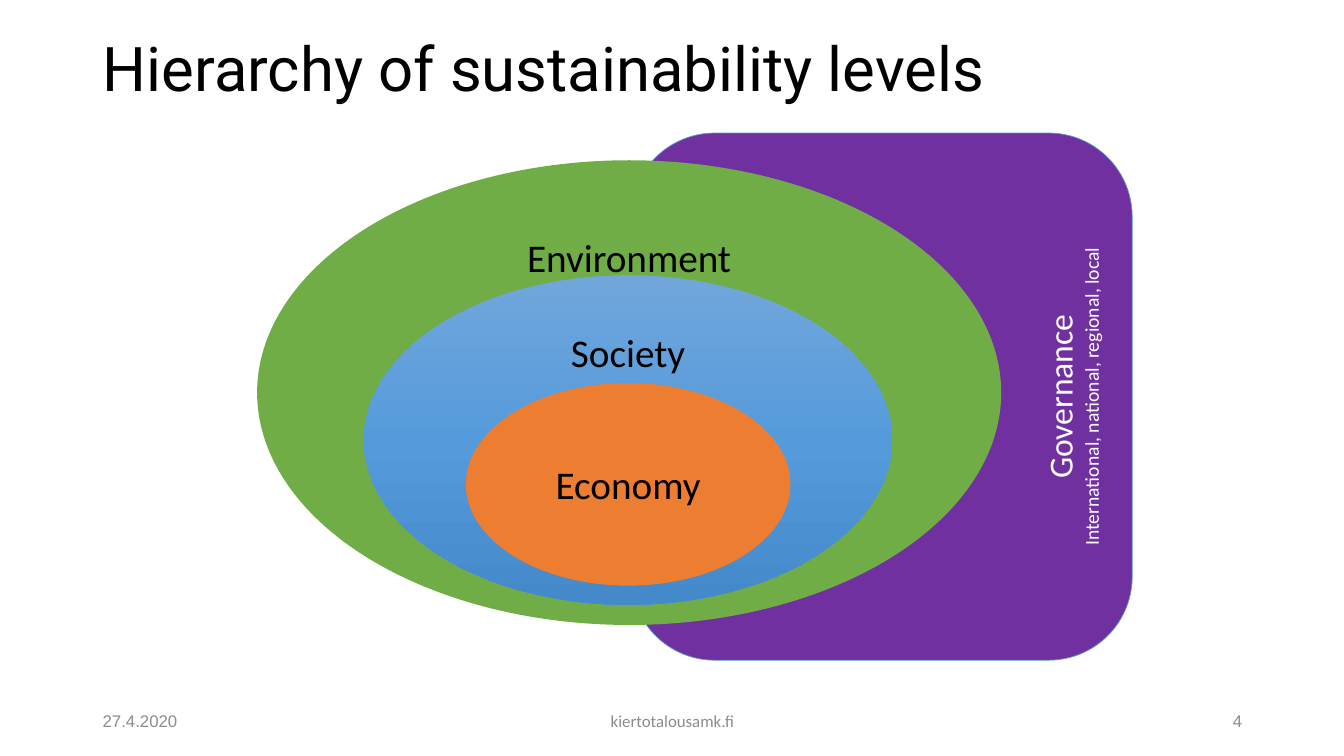
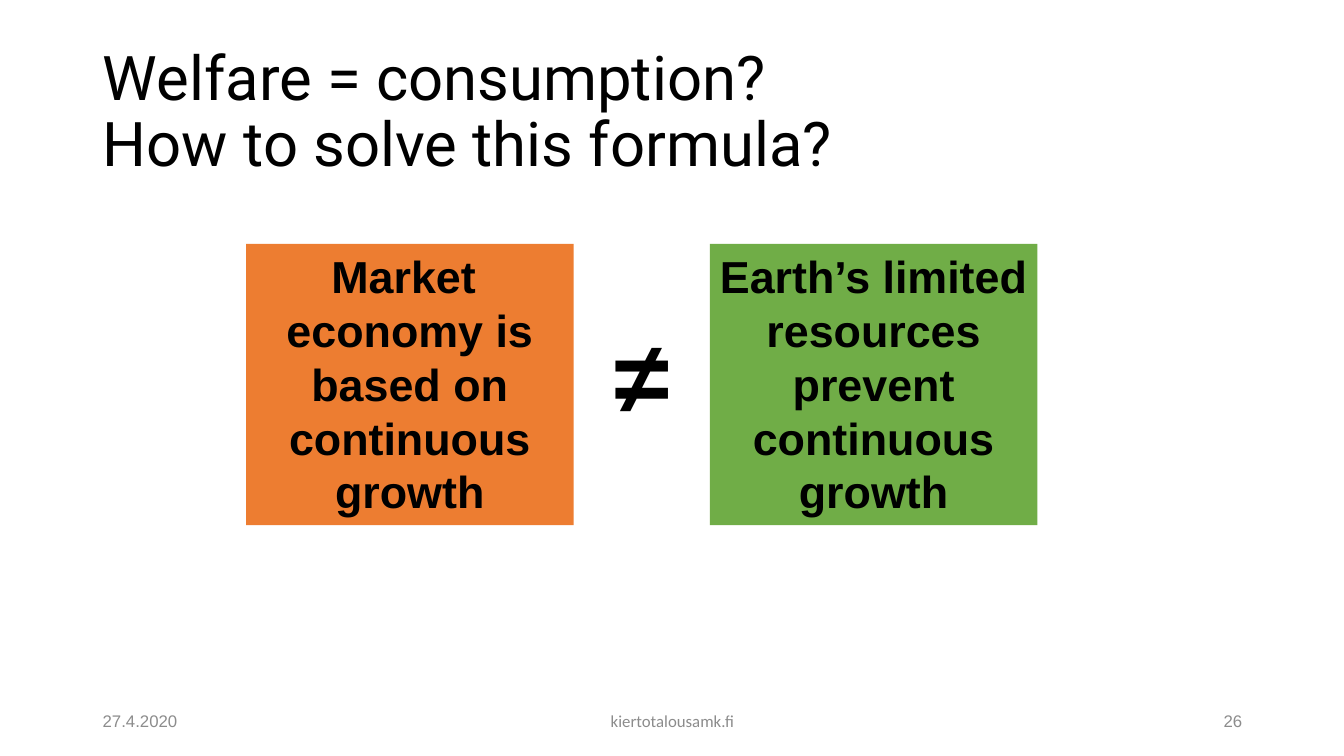
import copy
from dataclasses import dataclass
from typing import Optional

import pptx
import pptx.dml.color
import pptx.enum.shapes
import pptx.enum.text
import pptx.util

Inches = pptx.util.Inches
SHAPE = pptx.enum.shapes.MSO_SHAPE
ALIGN = pptx.enum.text.PP_ALIGN
ANCHOR = pptx.enum.text.MSO_ANCHOR

COLOURS = {
    "text": "000000",
    "light": "FFFFFF",
    "footer": "8C8C8C",
    "governance": "7030A0",
    "outline": "5B9BD5",
    "green": "70AD47",
    "orange": "ED7D31",
}
SOCIETY_GRADIENT = ((0, "71A6DB"), (0.5, "559BDB"), (1, "448ACA"))
MARGIN, CONTENT_WIDTH = 0.92, 11.5


@dataclass(frozen=True)
class Box:
    left: float
    top: float
    width: float
    height: float

    def lengths(self) -> tuple:
        return tuple(Inches(v) for v in (self.left, self.top, self.width, self.height))


@dataclass(frozen=True)
class Level:
    label: str
    box: Box
    colour: Optional[str]  # None means the society gradient
    anchor: ANCHOR = ANCHOR.TOP


@dataclass(frozen=True)
class FooterPart:
    left: float
    width: float
    align: ALIGN
    font: str


# Concentric levels, from the outermost to the innermost
LEVELS = (
    Level("Environment", Box(2.55, 1.59, 7.38, 4.61), "green"),
    Level("Society", Box(3.61, 2.73, 5.24, 3.27), None),
    Level("Economy", Box(4.62, 3.8, 3.22, 2.01), "orange", ANCHOR.MIDDLE),
)
# Date, site and slide number
FOOTER_PARTS = (
    FooterPart(MARGIN, 3, ALIGN.LEFT, "Arial"),
    FooterPart(4.42, 4.5, ALIGN.CENTER, "Calibri"),
    FooterPart(MARGIN + CONTENT_WIDTH - 3, 3, ALIGN.RIGHT, "Arial"),
)


def rgb(value: str) -> pptx.dml.color.RGBColor:
    return pptx.dml.color.RGBColor.from_string(value)


def write(shape, *texts: str, sizes: tuple, font: str = "Calibri", colour: str = "text",
          bold: bool = False, align: ALIGN = ALIGN.CENTER, anchor: ANCHOR = ANCHOR.TOP,
          spacing: Optional[float] = None) -> None:
    """Fill a shape with one paragraph per text, each in its own size."""
    frame = shape.text_frame
    frame.word_wrap = True
    frame.auto_size = pptx.enum.text.MSO_AUTO_SIZE.NONE
    frame.vertical_anchor = anchor
    for index, (text, size) in enumerate(zip(texts, sizes)):
        paragraph = frame.add_paragraph() if index else frame.paragraphs[0]
        paragraph.text = text
        paragraph.alignment = align
        if spacing:
            paragraph.line_spacing = spacing
        for run in paragraph.runs:
            run.font.name = font
            run.font.size = pptx.util.Pt(size)
            run.font.bold = bold
            run.font.color.rgb = rgb(COLOURS[colour])


def add_filled(slide, preset: SHAPE, box: Box, colour: Optional[str]):
    shape = slide.shapes.add_shape(preset, *box.lengths())
    shape.shadow.inherit = False
    shape.line.fill.background()
    if colour:
        shape.fill.solid()
        shape.fill.fore_color.rgb = rgb(COLOURS[colour])
    else:
        fill_gradient(shape)
    return shape


def fill_gradient(shape) -> None:
    shape.fill.gradient()
    shape.fill.gradient_angle = 270
    stop_list = shape._element.xpath(".//a:gsLst")[0]
    stop_list.append(copy.deepcopy(stop_list[-1]))  # third stop
    for stop, (position, colour) in zip(shape.fill.gradient_stops, SOCIETY_GRADIENT):
        stop.position = position
        stop.color.rgb = rgb(colour)


def add_slide(deck, title: str, top: float, height: float, number: int):
    """Title-only slide with the shared title style and footer."""
    slide = deck.slides.add_slide(deck.slide_layouts[5])
    heading = slide.shapes.title
    heading.left, heading.top, heading.width, heading.height = Box(
        MARGIN, top, CONTENT_WIDTH, height).lengths()
    write(heading, title, sizes=(44,), font="Roboto", align=ALIGN.LEFT,
          anchor=ANCHOR.MIDDLE, spacing=0.9)
    for part, text in zip(FOOTER_PARTS, ("27.4.2020", "kiertotalousamk.fi", str(number))):
        box = slide.shapes.add_textbox(*Box(part.left, 6.95, part.width, 0.4).lengths())
        write(box, text, sizes=(12,), font=part.font, colour="footer",
              align=part.align, anchor=ANCHOR.MIDDLE)
    return slide


def build_hierarchy(deck) -> None:
    slide = add_slide(deck, "Hierarchy of sustainability levels", 0.21, 1, 4)

    # Governance stands behind all levels, its text turned upwards
    governance = add_filled(slide, SHAPE.ROUNDED_RECTANGLE,
                            Box(6.26, 1.32, 4.97, 5.23), "governance")
    governance.line.color.rgb = rgb(COLOURS["outline"])
    governance.line.width = pptx.util.Pt(0.5)
    write(governance, "Governance", "International, national, regional, local",
          sizes=(24, 14), colour="light", anchor=ANCHOR.BOTTOM)
    governance.text_frame._txBody.bodyPr.set("vert", "vert270")

    for level in LEVELS:
        ellipse = add_filled(slide, SHAPE.OVAL, level.box, level.colour)
        write(ellipse, level.label, sizes=(28,), anchor=level.anchor)


def build_formula(deck) -> None:
    slide = add_slide(deck, "Welfare = consumption?\nHow to solve this formula?", 0.4, 1.45, 26)

    # Two sides of the formula
    sides = (
        (2.44, "orange", "Market \neconomy is based on continuous growth"),
        (7.04, "green", "Earth’s limited resources prevent continuous growth"),
    )
    for left, colour, statement in sides:
        side = add_filled(slide, SHAPE.RECTANGLE, Box(left, 2.42, 3.25, 2.79), colour)
        write(side, statement, sizes=(32,), font="Arial", bold=True)

    # Sign between them
    sign = slide.shapes.add_textbox(*Box(5.64, 3.05, 1.46, 1.31).lengths())
    write(sign, "≠", sizes=(72,), font="Arial", bold=True)


def main() -> None:
    deck = pptx.Presentation()
    deck.slide_width, deck.slide_height = Inches(13.33), Inches(7.5)
    build_hierarchy(deck)
    build_formula(deck)
    deck.save("out.pptx")


if __name__ == "__main__":
    main()
